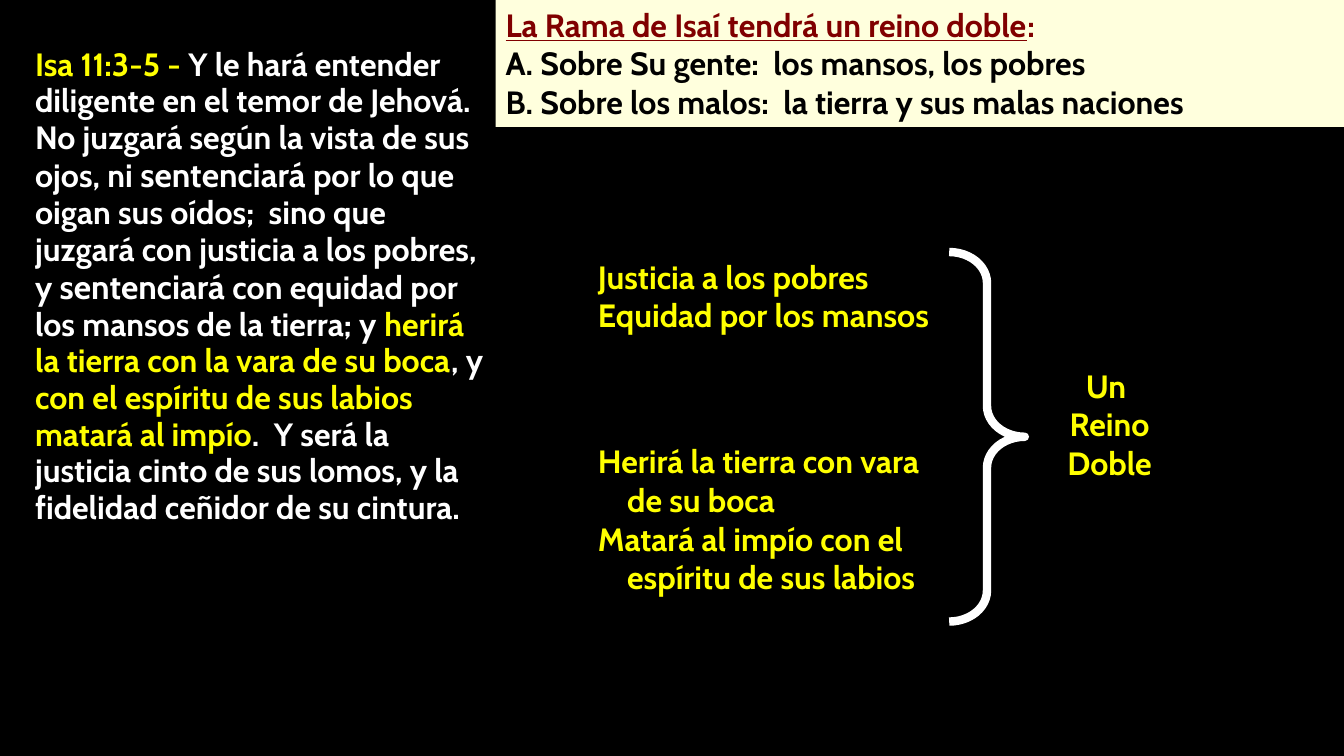
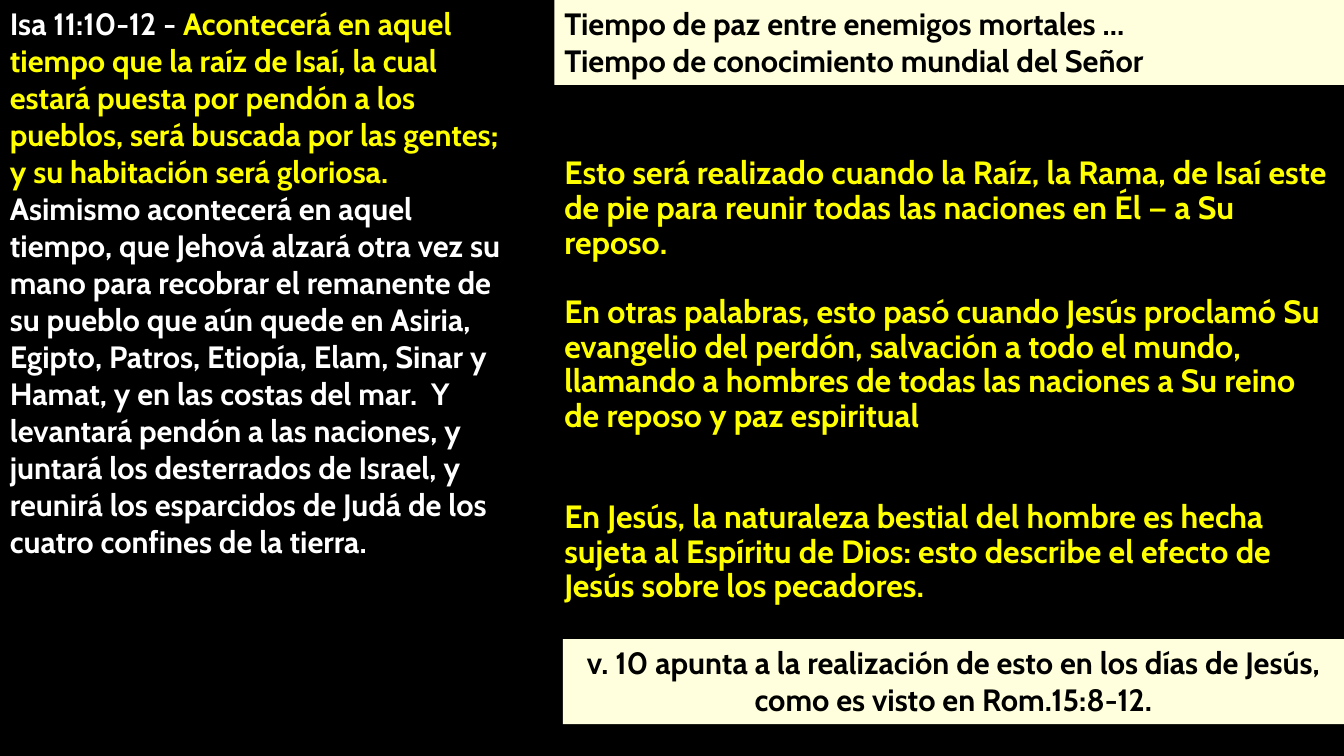
from dataclasses import dataclass

from pptx import Presentation
from pptx import util as u
from pptx.dml.color import RGBColor
from pptx.enum import shapes, text


@dataclass(frozen=True)
class Theme:
    font: str = "Cabin"
    black: str = "000000"
    white: str = "FFFFFF"
    yellow: str = "FFFF00"
    cream: str = "FFFFDD"
    maroon: str = "800000"
    small: int = 22
    body: int = 23
    large: int = 24
    hang: float = 0.29
    brace: int = 6


t = Theme()
LEFT, CENTER = text.PP_ALIGN.LEFT, text.PP_ALIGN.CENTER

prs = Presentation()
prs.slide_width, prs.slide_height = u.Inches(13.33), u.Inches(7.5)
col, row = prs.slide_width / 160, prs.slide_height / 90
bg = prs.slide_master.background.fill
bg.solid()
bg.fore_color.rgb = RGBColor.from_string(t.black)


def place(x, y, w, h):
    return int(x * col), int(y * row), int(w * col), int(h * row)


def write(s, at, paragraphs, size=t.body, fill=None, align=LEFT, spacing=None, hang=0):
    if fill:
        sp = s.shapes.add_shape(shapes.MSO_SHAPE.RECTANGLE, *place(*at))
        sp.shadow.inherit = False
        sp.fill.solid()
        sp.fill.fore_color.rgb = RGBColor.from_string(fill)
        sp.line.fill.background()
    else:
        sp = s.shapes.add_textbox(*place(*at))
    tf = sp.text_frame
    tf.word_wrap = True
    tf.auto_size = text.MSO_AUTO_SIZE.SHAPE_TO_FIT_TEXT
    tf.vertical_anchor = text.MSO_ANCHOR.TOP
    for i, runs in enumerate(paragraphs):
        p = tf.add_paragraph() if i else tf.paragraphs[0]
        p.alignment = align
        if spacing:
            p.line_spacing = spacing
        if hang:
            pPr = p._p.get_or_add_pPr()
            pPr.set("marL", str(u.Inches(hang)))
            pPr.set("indent", str(-u.Inches(hang)))
        for words, color, *look in runs:
            for n, line in enumerate(words.split("\n")):
                if n:
                    p.add_line_break()
                r = p.add_run()
                r.text = line
                r.font.name, r.font.bold = t.font, True
                r.font.size = u.Pt(t.large if "large" in look else size)
                r.font.color.rgb = RGBColor.from_string(color)
                if "underline" in look:
                    r.font.underline = True


blank = prs.slide_layouts[6]

s = prs.slides.add_slide(blank)
write(s, (59, 0, 101, 15.1), [
    [("La Rama de Isaí tendrá un reino doble", t.maroon, "underline"), (":", t.maroon)],
    [("A. Sobre Su gente:  los mansos, los pobres", t.black)],
    [("B. Sobre los malos:  la tierra y sus malas naciones", t.black)],
], fill=t.cream)
write(s, (3, 5, 56, 76), [[
    ("Isa 11:3-5 - ", t.yellow),
    ("Y le hará entender diligente en el temor de Jehová. No juzgará según "
     "la vista de sus ojos, ni ", t.white),
    ("sentenciará ", t.white, "large"),
    ("por lo que oigan sus oídos;  sino que juzgará con justicia a los pobres, y ", t.white),
    ("sentenciará ", t.white, "large"),
    ("con equidad por los mansos de la tierra; y ", t.white),
    ("herirá la tierra con la vara de su boca", t.yellow),
    (", y ", t.white),
    ("con el espíritu de sus labios matará al impío", t.yellow),
    (".  Y será la justicia cinto de sus lomos, y la fidelidad ceñidor de su cintura.", t.white),
]], spacing=0.95)
write(s, (70, 30, 52, 11), [
    [("Justicia a los pobres", t.yellow)],
    [("Equidad por los mansos", t.yellow)],
])
write(s, (70, 52, 52, 20), [
    [("Herirá la tierra con vara\nde su boca", t.yellow)],
    [("Matará al impío con el\nespíritu de sus labios", t.yellow)],
], hang=t.hang)
sp = s.shapes.add_shape(shapes.MSO_SHAPE.RIGHT_BRACE, *place(113, 30, 9, 44))
sp.shadow.inherit = False
sp.adjustments[0], sp.adjustments[1] = 0.41, 0.5
sp.fill.background()
sp.line.color.rgb = RGBColor.from_string(t.white)
sp.line.width = u.Pt(t.brace)
write(s, (123, 43, 18.2, 15.1),
      [[(word, t.yellow)] for word in ("Un ", "Reino", "Doble")], align=CENTER)

s = prs.slides.add_slide(blank)
write(s, (66, 0, 94, 10.1), [
    [("Tiempo de paz entre enemigos mortales …", t.black)],
    [("Tiempo de conocimiento mundial del Señor", t.black)],
], size=t.small, fill=t.cream)
write(s, (0, 0, 61, 81), [[
    ("Isa 11:10-12 - ", t.white),
    ("Acontecerá en aquel tiempo que la raíz de Isaí, la cual estará puesta por pendón "
     "a los pueblos, será buscada por las gentes; y su habitación será gloriosa.", t.yellow),
    (" Asimismo acontecerá en aquel tiempo, que Jehová alzará otra vez su mano para "
     "recobrar el remanente de su pueblo que aún quede en Asiria, Egipto, Patros, Etiopía, "
     "Elam, Sinar y Hamat, y en las costas del mar.  Y levantará pendón a las naciones, y "
     "juntará los desterrados de Israel, y reunirá los esparcidos de Judá de los cuatro "
     "confines de la tierra.", t.white),
]], size=t.small)
for top, height, words in (
    (18.1, 13.8, "Esto será realizado cuando la Raíz, la Rama, de Isaí este de pie para "
                 "reunir todas las naciones en Él — a Su reposo."),
    (34.6, 22, "En otras palabras, esto pasó cuando Jesús proclamó Su evangelio del perdón, "
               "salvación a todo el mundo, llamando a hombres de todas las naciones a Su "
               "reino de reposo y paz espiritual"),
    (59, 13.8, "En Jesús, la naturaleza bestial del hombre es hecha sujeta al Espíritu de "
               "Dios: esto describe el efecto de Jesús sobre los pecadores."),
):
    write(s, (66, top, 94, height), [[(words, t.yellow)]], spacing=0.9)
write(s, (67, 76.1, 93, 10.1), [[
    ("v. 10 apunta a la realización de esto en los días de Jesús, "
     "como es visto en Rom.15:8-12.", t.black),
]], size=t.small, fill=t.cream, align=CENTER)

prs.save("out.pptx")
